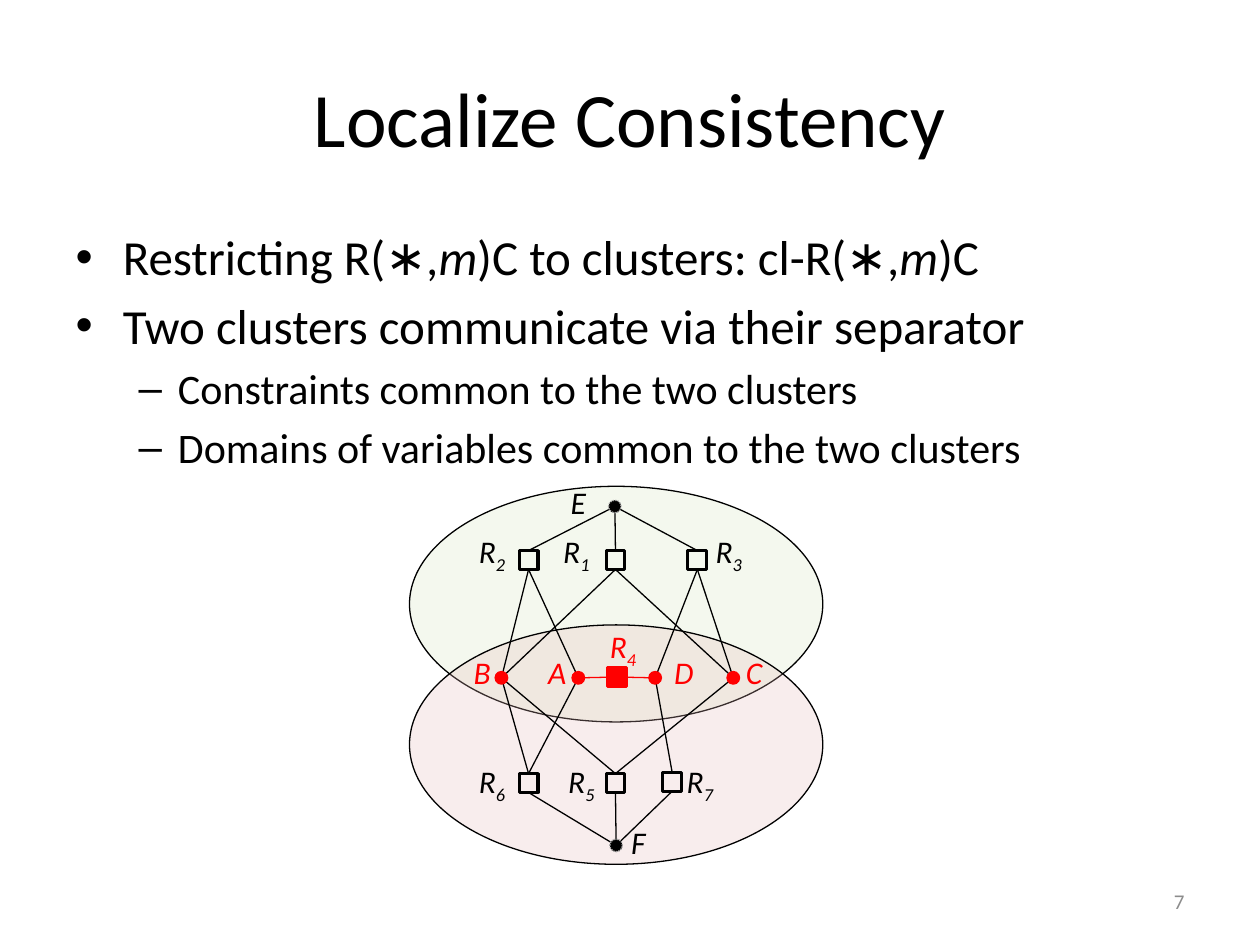
"""Builds the "Localize Consistency" slide with two overlapping clusters."""
from math import hypot

from lxml.etree import SubElement
from pptx import Presentation
from pptx.dml.color import RGBColor
from pptx.enum.dml import MSO_LINE
from pptx.enum.shapes import MSO_CONNECTOR, MSO_SHAPE
from pptx.enum.text import MSO_ANCHOR, MSO_AUTO_SIZE, PP_ALIGN
from pptx.oxml.ns import qn
from pptx.util import Pt

PX = 9144
SQUARE, DOT = 15, 10
COLORS = {
    "ink": "000000", "separator": "FF0000", "dotted": "A6A6A6",
    "number": "8C8C8C", "upper": "D7E4BD", "lower": "E6B9B8",
}
RGB = {name: RGBColor.from_string(value) for name, value in COLORS.items()}
LABEL_FONT = {"name": "Calibri", "size": Pt(18), "italic": True}
LABEL_FRAME = {
    "margin_left": 0, "margin_top": 0, "margin_right": 0, "margin_bottom": 0,
    "word_wrap": False, "auto_size": MSO_AUTO_SIZE.SHAPE_TO_FIT_TEXT,
}
NUMBER_FONT = {"name": "Calibri", "size": Pt(12)}

BULLETS = [
    (0, 28, ["Restricting R(∗,", "m", ")C to clusters: cl-R(∗,", "m", ")C"]),
    (0, 28, ["Two clusters communicate via their separator"]),
    (1, 24, ["Constraints common to the two clusters"]),
    (1, 24, ["Domains of variables common to the two clusters"]),
]
CLUSTERS = [("upper", 386, 187), ("lower", 496, 190)]
CONSTRAINTS = {
    "R1": (481, 437, "EBC"), "R2": (412, 437, "EAB"), "R3": (546, 437, "ECD"),
    "R4": (482, 530, "AD"), "R5": (481, 614, "BCF"), "R6": (412, 614, "ABF"),
    "R7": (526, 613, "DF"),
}
VARIABLES = {
    "A": (454, 533), "B": (393, 533), "C": (577, 533), "D": (515, 533),
    "E": (483, 397), "F": (484, 666),
}
SEPARATOR = {"A", "B", "C", "D", "R4"}
LABELS = {
    "R1": (447, 422, 27), "R2": (380, 422, 27), "R3": (568, 422, 27),
    "R4": (484, 498, 27), "R5": (451, 605, 27), "R6": (380, 605, 27),
    "R7": (545, 605, 27), "A": (435, 518, 19), "B": (376, 518, 18),
    "C": (592, 518, 18), "D": (535, 518, 20), "E": (453, 383, 17),
    "F": (501, 653, 16),
}


def apply(target, values):
    for name, value in values.items():
        setattr(target, name, value)


def add_outlined(kind, box, line_color, width, fill=None):
    shape = network.add_shape(kind, *[round(v * PX) for v in box])
    shape.shadow.inherit = False
    shape.line.color.rgb = RGB[line_color]
    shape.line.width = Pt(width)
    if fill:
        shape.fill.solid()
        shape.fill.fore_color.rgb = RGB[fill]
    else:
        shape.fill.background()
    return shape


deck = Presentation()
deck.slide_width, deck.slide_height = 1000 * PX, 750 * PX
slide = deck.slides.add_slide(deck.slide_layouts[1])

title, body = slide.placeholders
for holder, box in ((title, (50, 30, 900, 125)), (body, (50, 175, 900, 495))):
    holder.left, holder.top, holder.width, holder.height = [v * PX for v in box]
title.text_frame.text = "Localize Consistency"
title_font = {"name": "Calibri", "size": Pt(44)}
apply(title.text_frame.paragraphs[0].runs[0].font, title_font)

for index, (level, size, parts) in enumerate(BULLETS):
    frame = body.text_frame
    bullet = frame.add_paragraph() if index else frame.paragraphs[0]
    bullet.level = level
    for part in parts:
        run = bullet.add_run()
        run.text = part
        apply(run.font, {"name": "Calibri", "size": Pt(size), "italic": part == "m"})

page = slide.shapes.add_textbox(717 * PX, 695 * PX, 233 * PX, 40 * PX).text_frame
apply(page, {"word_wrap": True, "vertical_anchor": MSO_ANCHOR.MIDDLE})
page.text = "7"
page.paragraphs[0].alignment = PP_ALIGN.RIGHT
page_font = page.paragraphs[0].runs[0].font
apply(page_font, NUMBER_FONT)
page_font.color.rgb = RGB["number"]

network = slide.shapes.add_group_shape().shapes

for fill, top, height in CLUSTERS:
    cluster = add_outlined(MSO_SHAPE.OVAL, (325, top, 328, height), "ink", 0.75, fill)
    tint = cluster.fill._xPr.find(qn("a:solidFill"))[0]
    SubElement(tint, qn("a:alpha"), val="25000")

for constraint, (left, top, scope) in CONSTRAINTS.items():
    for variable in scope:
        dot_x, dot_y = [v + DOT / 2 for v in VARIABLES[variable]]
        x, y = left + SQUARE / 2, top + SQUARE / 2
        if constraint in SEPARATOR:
            x += SQUARE / 2 if dot_x > x else -SQUARE / 2
        else:
            y += SQUARE / 2 if dot_y > y else -SQUARE / 2
        reach = DOT / 2 / hypot(x - dot_x, y - dot_y)
        ends = (x, y, dot_x + (x - dot_x) * reach, dot_y + (y - dot_y) * reach)
        edge = network.add_connector(
            MSO_CONNECTOR.STRAIGHT, *[round(v * PX) for v in ends])
        edge.line.color.rgb = RGB["separator" if constraint in SEPARATOR else "ink"]
        edge.line.width = Pt(0.75)
        SubElement(edge._element.spPr, qn("a:effectLst"))

for constraint, (left, top, scope) in CONSTRAINTS.items():
    shared = constraint in SEPARATOR
    add_outlined(MSO_SHAPE.RECTANGLE, (left, top, SQUARE, SQUARE),
                 "separator" if shared else "ink", 1.75,
                 "separator" if shared else None)

for variable, (left, top) in VARIABLES.items():
    shared = variable in SEPARATOR
    dot = add_outlined(MSO_SHAPE.OVAL, (left, top, DOT, DOT),
                       "separator" if shared else "dotted", 0.75,
                       "separator" if shared else "ink")
    if not shared:
        dot.line.dash_style = MSO_LINE.ROUND_DOT

for name, (left, top, width) in LABELS.items():
    label = network.add_textbox(left * PX, top * PX, width * PX, 30 * PX).text_frame
    apply(label, LABEL_FRAME)
    for position, character in enumerate(name):
        run = label.paragraphs[0].add_run()
        run.text = character
        apply(run.font, LABEL_FONT)
        run.font.color.rgb = RGB["separator" if name in SEPARATOR else "ink"]
        if position:
            run._r.get_or_add_rPr().set("baseline", "-25000")

deck.save("out.pptx")
